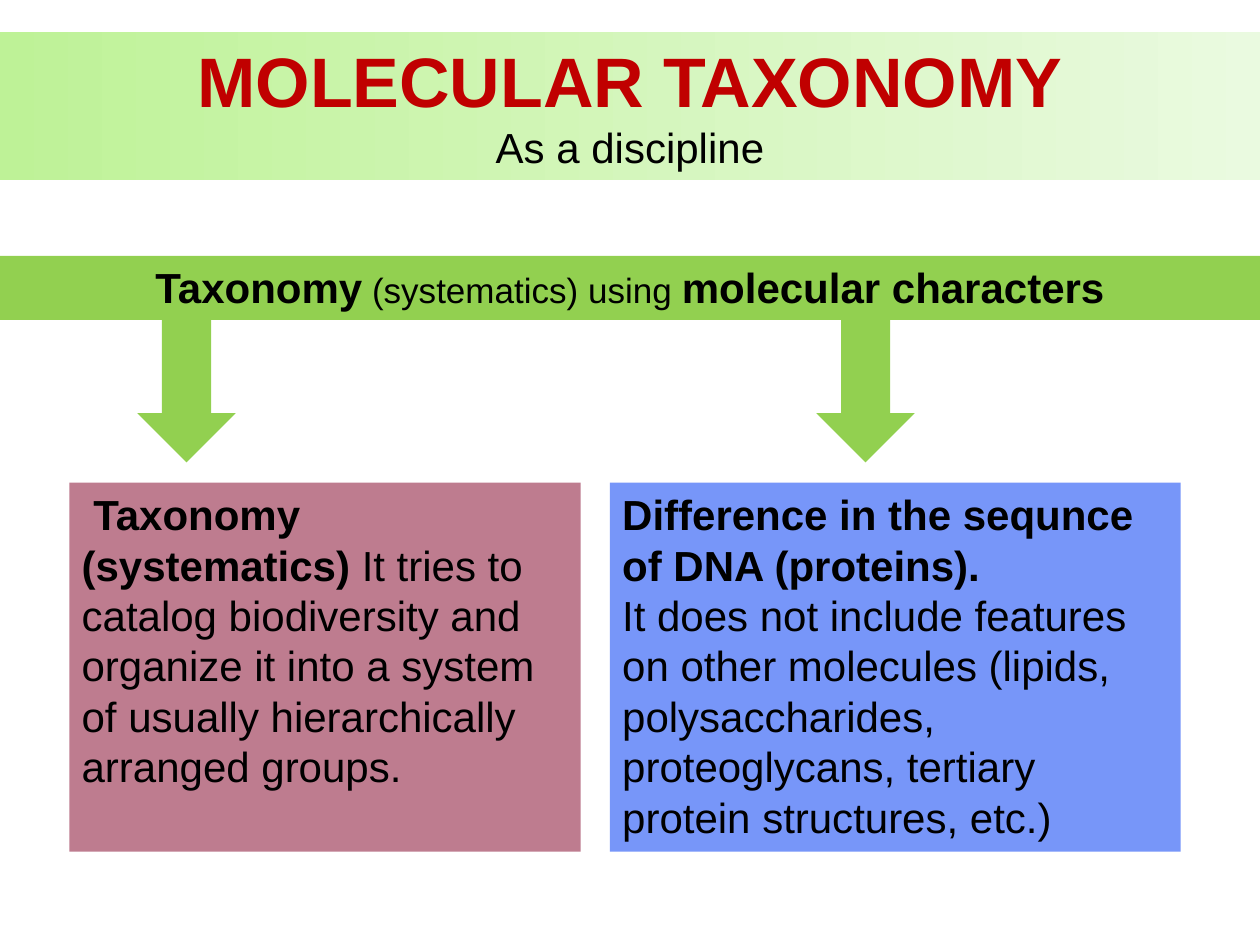
from dataclasses import dataclass

from pptx import Presentation
from pptx.dml.color import RGBColor
from pptx.enum.shapes import MSO_SHAPE
from pptx.enum.text import MSO_ANCHOR, PP_ALIGN
from pptx.util import Inches, Pt

COLUMNS, ROWS = 100, 75


@dataclass(frozen=True)
class Theme:
    font: str = "Arial"
    text: str = "000000"
    heading: str = "C00000"
    green: str = "92D050"
    rose: str = "BE7C8F"
    blue: str = "7796F9"
    fade: tuple = ("BEF297", "EAFAE0")
    title_size: int = 40
    body_size: int = 24
    small_size: int = 20


class SlideBuilder:
    def __init__(self, presentation, theme):
        self.theme = theme
        self.column = presentation.slide_width / COLUMNS
        self.row = presentation.slide_height / ROWS
        self.slide = presentation.slides.add_slide(presentation.slide_layouts[6])

    def block(self, preset, column, row, columns, rows, colour):
        """Add a borderless shape; a pair of colours makes a left-to-right fade."""
        shape = self.slide.shapes.add_shape(
            preset, round(column * self.column), round(row * self.row),
            round(columns * self.column), round(rows * self.row))
        shape.shadow.inherit = False
        shape.line.fill.background()
        if isinstance(colour, tuple):
            shape.fill.gradient()
            shape.fill.gradient_angle = 0
            for stop, shade in zip(shape.fill.gradient_stops, colour):
                stop.color.rgb = RGBColor.from_string(shade)
                stop.position = colour.index(shade)
        else:
            shape.fill.solid()
            shape.fill.fore_color.rgb = RGBColor.from_string(colour)
        return shape

    def panel(self, column, row, columns, rows, colour, paragraphs, align=PP_ALIGN.LEFT):
        """Add a text panel; each paragraph is a list of (wording, size, bold, colour)."""
        shape = self.block(MSO_SHAPE.RECTANGLE, column, row, columns, rows, colour)
        frame = shape.text_frame
        frame.word_wrap = True
        frame.vertical_anchor = MSO_ANCHOR.TOP
        for index, pieces in enumerate(paragraphs):
            paragraph = frame.add_paragraph() if index else frame.paragraphs[0]
            paragraph.alignment = align
            for wording, size, bold, text_colour in pieces:
                run = paragraph.add_run()
                run.text = wording
                run.font.name = self.theme.font
                run.font.size = Pt(size)
                run.font.bold = bold
                run.font.color.rgb = RGBColor.from_string(text_colour)

    def down_arrow(self, column, row):
        self.block(MSO_SHAPE.DOWN_ARROW, column, row, 7.8, 11.7, self.theme.green)


def main():
    presentation = Presentation()
    presentation.slide_width, presentation.slide_height = Inches(10), Inches(7.5)
    theme = Theme()
    builder = SlideBuilder(presentation, theme)

    def plain(wording, size=theme.body_size):
        return wording, size, False, theme.text

    def strong(wording, size=theme.body_size, colour=theme.text):
        return wording, size, True, colour

    builder.panel(0, 2.5, COLUMNS, 11.8, theme.fade, [
        [strong("MOLECULAR TAXONOMY", theme.title_size, theme.heading)],
        [plain("As a discipline")],
    ], PP_ALIGN.CENTER)
    builder.panel(0, 20.3, COLUMNS, 5.1, theme.green, [
        [strong("Taxonomy"), plain(" (systematics) using ", theme.small_size),
         strong("molecular characters")],
    ], PP_ALIGN.CENTER)

    panel_row, panel_rows = 38.3, 29.3
    builder.panel(5.5, panel_row, 40.6, panel_rows, theme.rose, [
        [strong(" Taxonomy (systematics) "),
         plain("It tries to catalog biodiversity and organize it into a system "
               "of usually hierarchically arranged groups.")],
    ])
    builder.panel(48.4, panel_row, 45.3, panel_rows, theme.blue, [
        [strong("Difference in the sequnce of DNA (proteins).")],
        [plain("It does not include features on other molecules (lipids, "
               "polysaccharides, proteoglycans, tertiary protein structures, etc.)")],
    ])
    for arrow_column in (10.9, 64.8):
        builder.down_arrow(arrow_column, 25)

    presentation.save("out.pptx")


if __name__ == "__main__":
    main()
